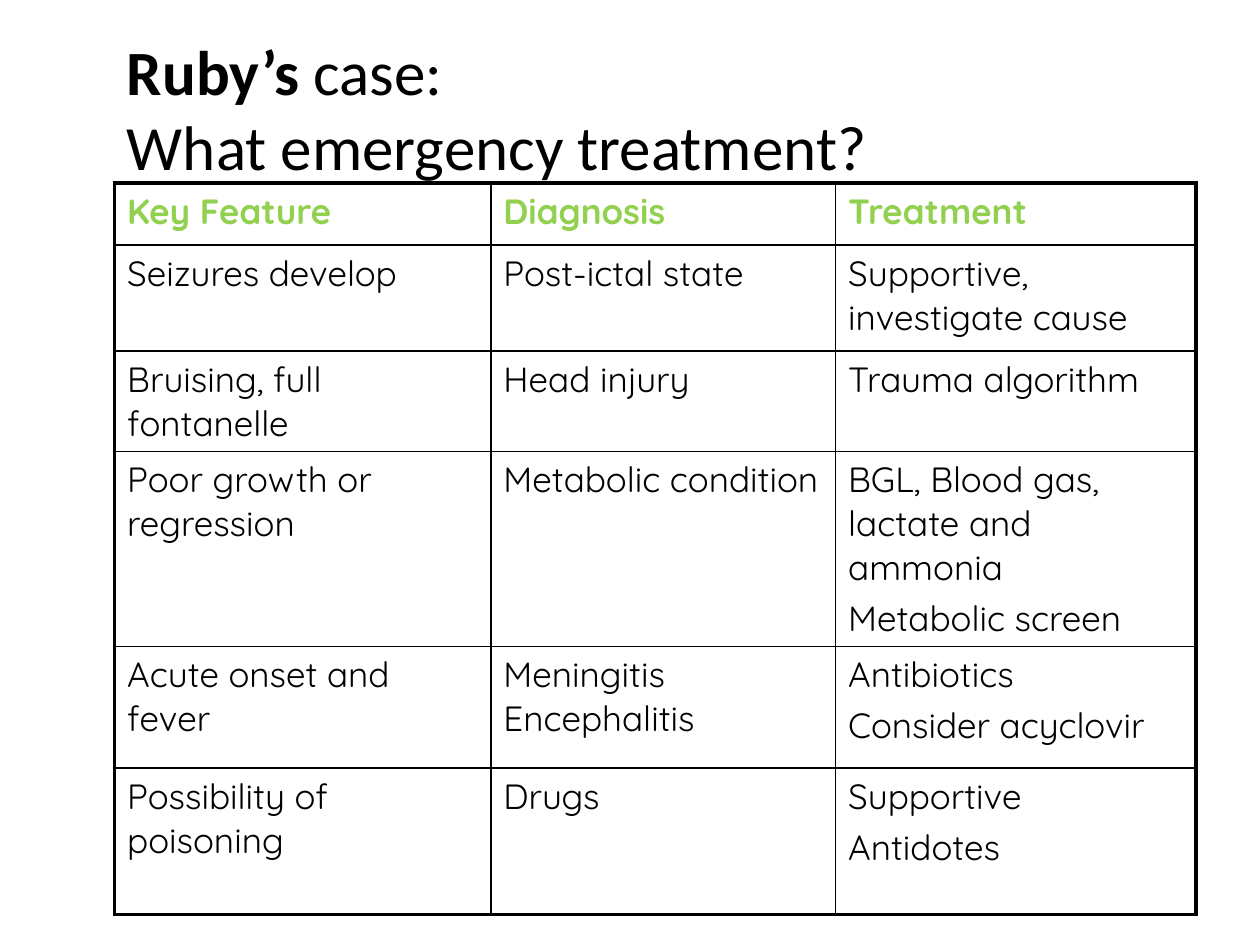
import dataclasses

import lxml.etree
import pptx
import pptx.dml.color
import pptx.enum.text
import pptx.oxml.ns
import pptx.util

Pt = pptx.util.Pt
qn = pptx.oxml.ns.qn


@dataclasses.dataclass
class Theme:
    ink: str = "000000"
    accent: str = "92D050"
    head: str = "Calibri"
    body: str = "Quicksand"
    title: float = 36
    cell: float = 20
    gap: float = 4
    thin: float = 1
    thick: float = 2.25


class Deck:
    def __init__(self, theme, width, height):
        self.theme = theme
        self.prs = pptx.Presentation()
        self.prs.slide_width, self.prs.slide_height = Pt(width), Pt(height)
        self.slide = self.prs.slides.add_slide(self.prs.slide_layouts[6])

    def run(self, para, text, font, size, color, bold=False):
        run = para.add_run()
        run.text = text
        run.font.name, run.font.size, run.font.bold = font, Pt(size), bold
        run.font.color.rgb = pptx.dml.color.RGBColor.from_string(color)

    def title(self, box, lines):
        """Each line is a list of (text, bold) runs."""
        frame = self.slide.shapes.add_textbox(*map(Pt, box)).text_frame
        frame.word_wrap = True
        frame.vertical_anchor = pptx.enum.text.MSO_ANCHOR.MIDDLE
        para = frame.paragraphs[0]
        for i, line in enumerate(lines):
            if i:
                para.add_line_break()
            for text, bold in line:
                self.run(para, text, self.theme.head, self.theme.title,
                         self.theme.ink, bold)

    def border(self, cell, sides):
        props = cell._tc.get_or_add_tcPr()
        for i, (side, width) in enumerate(sides.items()):
            line = lxml.etree.Element(qn(f"a:ln{side}"), w=str(Pt(width)))
            fill = lxml.etree.SubElement(line, qn("a:solidFill"))
            lxml.etree.SubElement(fill, qn("a:srgbClr"), val=self.theme.ink)
            props.insert(i, line)

    def fill(self, cell, items, color, bold):
        frame = cell.text_frame
        for i, text in enumerate(items):
            para = frame.add_paragraph() if i else frame.paragraphs[0]
            para.space_before = Pt(self.theme.gap if i else 0)
            self.run(para, text, self.theme.body, self.theme.cell, color, bold)

    def table(self, left, top, widths, heights, rows):
        """Heavy outer frame, thin inner rules; first row is the header."""
        theme = self.theme
        grid = self.slide.shapes.add_table(
            len(rows), len(widths), Pt(left), Pt(top),
            Pt(sum(widths)), Pt(sum(heights))).table
        for col, width in zip(grid.columns, widths):
            col.width = Pt(width)
        for r, items in enumerate(rows):
            grid.rows[r].height = Pt(heights[r])
            for c, text in enumerate(items):
                cell = grid.cell(r, c)
                cell.margin_left = cell.margin_right = Pt(7.2)
                cell.margin_top = cell.margin_bottom = Pt(3.6)
                cell.fill.background()
                edges = {"L": c == 0, "R": c == len(widths) - 1,
                         "T": r == 0, "B": r == len(rows) - 1}
                self.border(cell, {side: theme.thick if outer else theme.thin
                                   for side, outer in edges.items()})
                self.fill(cell, text.split("\n"),
                          theme.ink if r else theme.accent, r == 0)


ROWS = [
    ("Key Feature", "Diagnosis", "Treatment"),
    ("Seizures develop", "Post-ictal state", "Supportive, investigate cause"),
    ("Bruising, full fontanelle", "Head injury", "Trauma algorithm"),
    ("Poor growth or regression", "Metabolic condition",
     "BGL, Blood gas, lactate and ammonia\nMetabolic screen"),
    ("Acute onset and fever", "Meningitis Encephalitis",
     "Antibiotics\nConsider acyclovir"),
    ("Possibility of poisoning", "Drugs", "Supportive\nAntidotes"),
]


def main():
    deck = Deck(Theme(), 720, 540)
    deck.title((65.5, 9.4, 528.5, 104.4), [
        [("Ruby’s", True), (" case:", False)],
        [("What emergency treatment?", False)],
    ])
    deck.table(65.5, 104.5, (215, 197, 206),
               (35.5, 60.5, 57.5, 111.5, 69.5, 83.5), ROWS)
    deck.prs.save("out.pptx")


if __name__ == "__main__":
    main()
